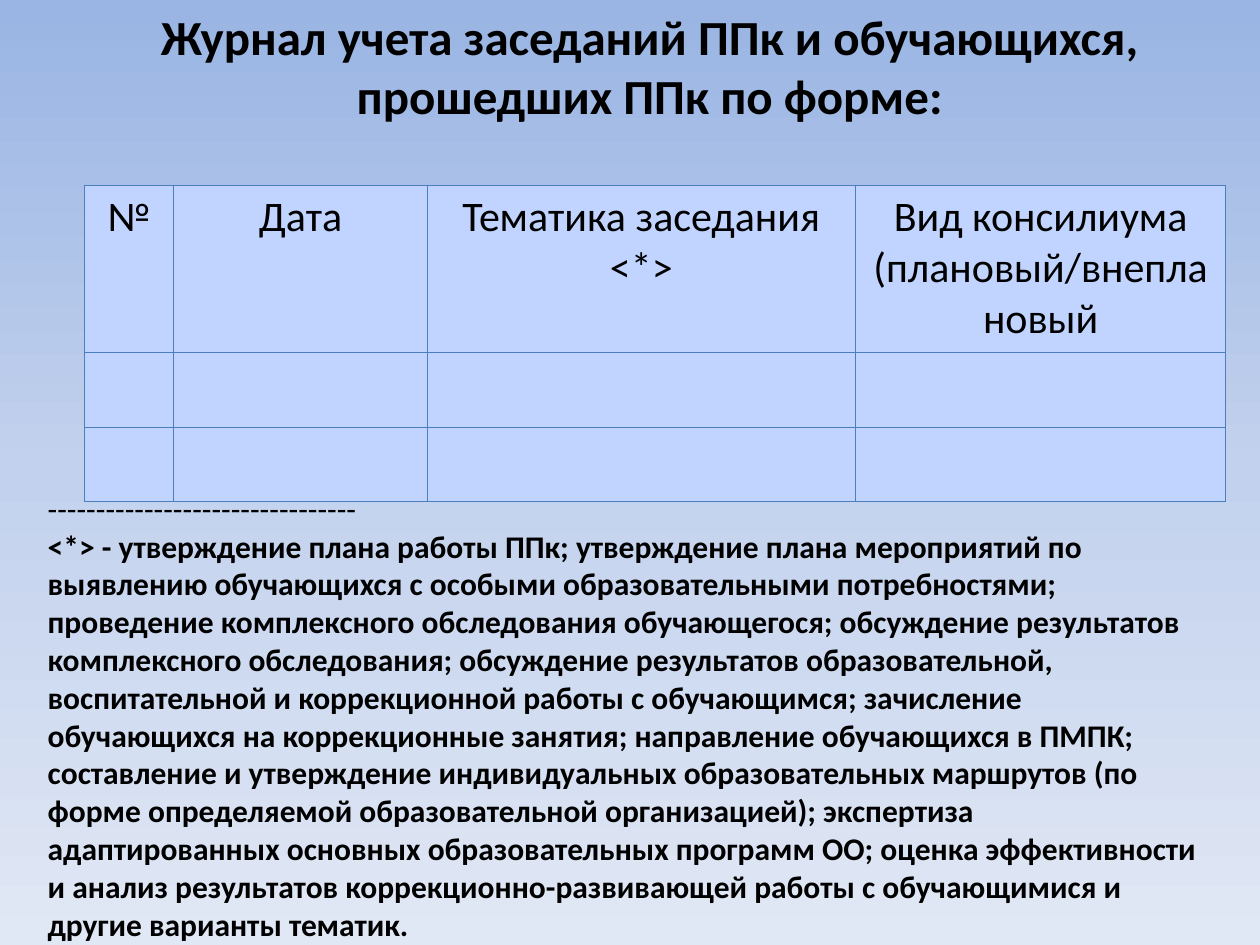
from copy import deepcopy

from lxml import etree
from pptx import Presentation
from pptx.dml.color import RGBColor
from pptx.enum import text
from pptx.oxml.ns import qn
from pptx.util import Inches, Pt

FONT = "Calibri"
BLACK = "000000"
CELL_FILL = "C0D4FF"
BORDER = "4B7EBC"
BACKGROUND = [(0, "9AB5E4"), (0.5, "C2D1ED"), (1, "E1E8F5")]

TITLE = "Журнал учета заседаний ППк и обучающихся, прошедших ППк по форме:"
HEADERS = ["№", "Дата", "Тематика заседания <*>",
           "Вид консилиума (плановый/внеплановый"]
COL_WIDTHS = [0.71, 2.01, 3.4, 2.94]
ROW_HEIGHTS = [1.33, 0.59, 0.59]
NOTE = (
    "<*> - утверждение плана работы ППк; утверждение плана мероприятий по "
    "выявлению обучающихся с особыми образовательными потребностями; "
    "проведение комплексного обследования обучающегося; обсуждение результатов "
    "комплексного обследования; обсуждение результатов образовательной, "
    "воспитательной и коррекционной работы с обучающимся; зачисление "
    "обучающихся на коррекционные занятия; направление обучающихся в ПМПК; "
    "составление и утверждение индивидуальных образовательных маршрутов (по "
    "форме определяемой образовательной организацией); экспертиза "
    "адаптированных основных образовательных программ ОО; оценка эффективности "
    "и анализ результатов коррекционно-развивающей работы с обучающимися и "
    "другие варианты тематик."
)


def color(hex_value):
    return RGBColor.from_string(hex_value)


def add_run(p, words, size, bold=False):
    r = p.add_run()
    r.text = words
    r.font.name = FONT
    r.font.size = Pt(size)
    r.font.bold = bold
    r.font.color.rgb = color(BLACK)


def set_background(s):
    fill = s.background.fill
    fill.gradient()
    fill.gradient_angle = 270
    stops = s.element.find(".//" + qn("a:gsLst"))
    stops.insert(1, deepcopy(stops[0]))
    for stop, (position, hex_value) in zip(fill.gradient_stops, BACKGROUND):
        stop.position = position
        stop.color.rgb = color(hex_value)


def set_borders(cell):
    tc_pr = cell._tc.get_or_add_tcPr()
    for i, side in enumerate(("lnL", "lnR", "lnT", "lnB")):
        ln = etree.Element(qn("a:" + side), w=str(Pt(0.75)))
        fill = etree.SubElement(ln, qn("a:solidFill"))
        etree.SubElement(fill, qn("a:srgbClr"), val=BORDER)
        tc_pr.insert(i, ln)


def place_title(s, left, top, width, height):
    sp = s.shapes.title
    sp.left, sp.top, sp.width, sp.height = left, top, width, height
    tf = sp.text_frame
    tf.word_wrap = True
    tf.auto_size = text.MSO_AUTO_SIZE.SHAPE_TO_FIT_TEXT
    tf.vertical_anchor = text.MSO_ANCHOR.TOP
    p = tf.paragraphs[0]
    p.alignment = text.PP_ALIGN.CENTER
    add_run(p, TITLE, 28, bold=True)


def add_journal(s, left, top, width, height):
    table = s.shapes.add_table(len(ROW_HEIGHTS), len(COL_WIDTHS),
                               left, top, width, height).table
    table.first_row = table.horz_banding = False
    for column, w in zip(table.columns, COL_WIDTHS):
        column.width = Inches(w)
    for row, h in zip(table.rows, ROW_HEIGHTS):
        row.height = Inches(h)
    for cell in table.iter_cells():
        cell.fill.solid()
        cell.fill.fore_color.rgb = color(CELL_FILL)
        set_borders(cell)
    # Header row
    for cell, words in zip(table.rows[0].cells, HEADERS):
        p = cell.text_frame.paragraphs[0]
        p.alignment = text.PP_ALIGN.CENTER
        add_run(p, words, 24)


def add_footnote(s, left, top, width, height):
    tf = s.shapes.add_textbox(left, top, width, height).text_frame
    tf.word_wrap = True
    tf.auto_size = text.MSO_AUTO_SIZE.SHAPE_TO_FIT_TEXT
    add_run(tf.paragraphs[0], "-" * 32, 18)
    add_run(tf.add_paragraph(), NOTE, 18, bold=True)


def main():
    prs = Presentation()
    prs.slide_width, prs.slide_height = Inches(10), Inches(7.5)
    s = prs.slides.add_slide(prs.slide_layouts[5])
    set_background(s)
    place_title(s, Inches(0.59), Inches(0), Inches(9.13), Inches(1.04))
    add_journal(s, Inches(0.67), Inches(1.47), Inches(9.06), Inches(2.51))
    add_footnote(s, Inches(0.28), Inches(3.83), Inches(9.45), Inches(3.74))
    prs.save("out.pptx")


if __name__ == "__main__":
    main()
